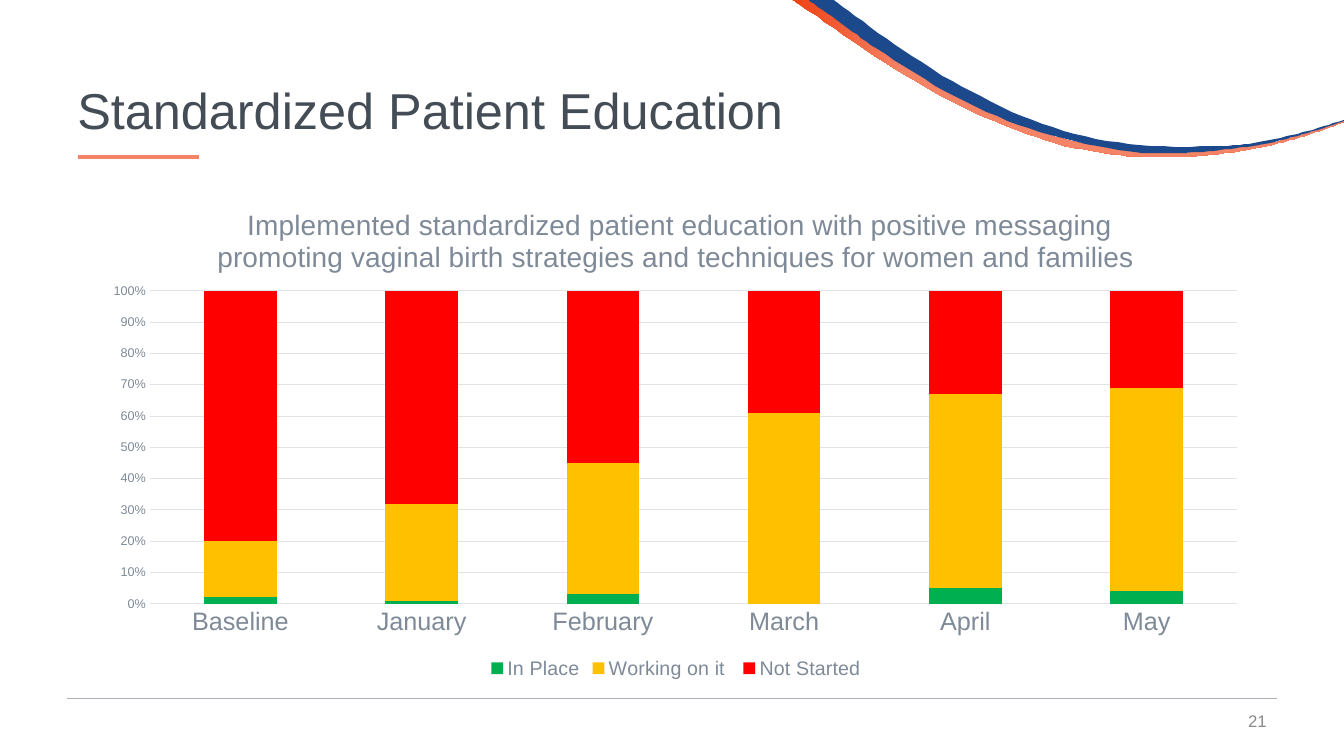
from lxml import etree
from pptx import Presentation, util as u
from pptx.chart.data import CategoryChartData
from pptx.dml.color import RGBColor
from pptx.enum import chart as ch, shapes, text
from pptx.oxml import parse_xml
from pptx.oxml.ns import nsdecls, qn

WIDE, HIGH = u.Inches(13.33), u.Inches(7.5)
GRAY, PALE, CORAL, NAVY = "7E8A98", "E1E4E7", "F58366", "1C498B"

# Edges of the ribbons, in hundredths of an inch
CORAL_TOP = [(805, 0), (882, 54), (958, 99), (1039, 133), (1081, 144), (1125, 150),
             (1168, 152), (1212, 149), (1256, 143), (1299, 132), (1333, 120)]
CORAL_LOW = [(1333, 121), (1299, 133), (1256, 145), (1213, 152), (1169, 156), (1124, 155),
             (1080, 149), (1037, 139), (955, 106), (878, 62), (804, 12), (786, 0)]
NAVY_TOP = [(827, 0), (879, 38), (954, 86), (1034, 123), (1120, 143), (1209, 145),
            (1253, 140), (1297, 130), (1333, 119)]
NAVY_LOW = [(1333, 120), (1297, 132), (1253, 143), (1209, 149), (1164, 152), (1119, 150),
            (1031, 131), (948, 96), (871, 49), (834, 23), (802, 0)]

MONTHS = ["Baseline", "January", "February", "March", "April", "May"]
STATUS = [("In Place", "00B050", [2, 1, 3, 0, 5, 4]),
          ("Working on it ", "FFC000", [18, 31, 42, 61, 62, 65]),
          ("Not Started", "FF0000", [80, 68, 55, 39, 33, 31])]


def col(n):
    """Position of a column, of 100 across the slide."""
    return round(WIDE * n / 100)


def row(n):
    """Position of a row, of 100 down the slide."""
    return round(HIGH * n / 100)


def rgb(code):
    return RGBColor.from_string(code)


def style(item, **look):
    for key, val in look.items():
        setattr(item, key, val)


def ink(font, size, color):
    style(font, name="Arial", size=u.Pt(size), bold=False)
    font.color.rgb = rgb(color)


def place(shape, x, y, w, h):
    style(shape, left=col(x), top=row(y), width=col(w), height=row(h))


def stroke(line, color, width):
    line.color.rgb = rgb(color)
    line.width = u.Pt(width)


def curve(nodes, steps=8):
    """Smooth path through the nodes (Catmull-Rom)."""
    ends = [nodes[0]] + nodes + [nodes[-1]]
    dots = []
    for a, b, c, d in zip(ends, ends[1:], ends[2:], ends[3:]):
        for i in range(steps):
            t = i / steps
            dots.append(tuple(
                (2 * q + (r - p) * t + (2 * p - 5 * q + 4 * r - s) * t ** 2
                 + (3 * q - p - 3 * r + s) * t ** 3) / 2
                for p, q, r, s in zip(a, b, c, d)))
    return dots + [nodes[-1]]


def ribbon(slide, top, low, stops):
    dots = curve(top) + curve(low)
    pen = slide.shapes.build_freeform(*dots[0], scale=u.Inches(0.01))
    pen.add_line_segments(dots[1:], close=True)
    shape = pen.convert_to_shape()
    shape.shadow.inherit = False
    shape.line.fill.background()
    if len(stops) == 1:
        shape.fill.solid()
        shape.fill.fore_color.rgb = rgb(stops[0][1])
        return
    shape.fill.gradient()
    shape.fill.gradient_angle = 0
    for stop, (pos, color) in zip(shape.fill.gradient_stops, stops):
        stop.position = pos
        stop.color.rgb = rgb(color)


def rule(slide, x, end, y, color, width):
    line = slide.shapes.add_connector(
        shapes.MSO_CONNECTOR.STRAIGHT, col(x), row(y), col(end), row(y))
    stroke(line.line, color, width)
    etree.SubElement(line._element.spPr, qn("a:effectLst"))


def write(shape, words, size, color, align):
    frame = shape.text_frame
    style(frame, word_wrap=True, auto_size=text.MSO_AUTO_SIZE.NONE,
          vertical_anchor=text.MSO_ANCHOR.MIDDLE)
    frame.text = words
    para = frame.paragraphs[0]
    para.alignment = align
    ink(para.runs[0].font, size, color)
    return para


def bars(slide, x, y, w, h):
    data = CategoryChartData()
    data.categories = MONTHS
    for name, _, vals in STATUS:
        data.add_series(name, vals)
    chart = slide.shapes.add_chart(ch.XL_CHART_TYPE.COLUMN_STACKED_100,
                                   col(x), row(y), col(w), row(h), data).chart
    ink(chart.font, 10, "444C55")

    # Series
    plot = chart.plots[0]
    style(plot, gap_width=150, overlap=100, vary_by_categories=False)
    for series, (_, color, _) in zip(plot.series, STATUS):
        series.format.fill.solid()
        series.format.fill.fore_color.rgb = rgb(color)

    # Heading and legend
    chart.has_title = True
    head = chart.chart_title
    head.include_in_layout = False
    head.text_frame.text = ("\u00a0Implemented standardized patient education with positive messaging "
                            "promoting vaginal birth strategies and techniques for women and families")
    ink(head.text_frame.paragraphs[0].runs[0].font, 20, GRAY)
    chart.has_legend = True
    style(chart.legend, position=ch.XL_LEGEND_POSITION.BOTTOM, include_in_layout=False)
    ink(chart.legend.font, 14, GRAY)

    # Axes
    months, share = chart.category_axis, chart.value_axis
    for axis, size in ((months, 18), (share, 9)):
        style(axis, major_tick_mark=ch.XL_TICK_MARK.NONE, minor_tick_mark=ch.XL_TICK_MARK.NONE)
        ink(axis.tick_labels.font, size, GRAY)
    stroke(months.format.line, PALE, 0.75)
    style(share, minimum_scale=0, maximum_scale=1, major_unit=0.1, has_major_gridlines=True)
    style(share.tick_labels, number_format="0%", number_format_is_linked=False)
    share.format.line.fill.background()
    stroke(share.major_gridlines.format.line, PALE, 0.75)

    # Plot area, as shares of the chart
    area = chart._chartSpace.chart.plotArea
    for old in area.findall(qn("c:layout")):
        area.remove(old)
    spots = "".join(f'<c:{k} val="{v}"/>' for k, v in (
        ("layoutTarget", "inner"), ("xMode", "edge"), ("yMode", "edge"),
        ("x", 0.05), ("y", 0.21), ("w", 0.93), ("h", 0.63)))
    area.insert(0, parse_xml(f'<c:layout {nsdecls("c")}><c:manualLayout>{spots}'
                             '</c:manualLayout></c:layout>'))


def main():
    deck = Presentation()
    style(deck, slide_width=WIDE, slide_height=HIGH)
    slide = deck.slides.add_slide(deck.slide_layouts[5])

    # Ribbons and rules
    ribbon(slide, CORAL_TOP, CORAL_LOW, [(0, "F04115"), (0.2, CORAL)])
    ribbon(slide, NAVY_TOP, NAVY_LOW, [(0, NAVY)])
    rule(slide, 5, 95, 92.4, "AFB3B9", 0.5)
    rule(slide, 5.8, 14.8, 20.8, CORAL, 2.5)

    # Title and page number
    title = slide.shapes.title
    place(title, 5, 5.3, 90, 19.3)
    para = write(title, "Standardized Patient Education", 36, "444C55", text.PP_ALIGN.LEFT)
    para.line_spacing = 0.9
    page = slide.shapes.add_textbox(col(72.5), row(92.7), col(22.5), row(5.3))
    write(page, "21", 12, "898989", text.PP_ALIGN.RIGHT)

    bars(slide, 6.8, 24.7, 87, 65.7)
    deck.save("out.pptx")


if __name__ == "__main__":
    main()
